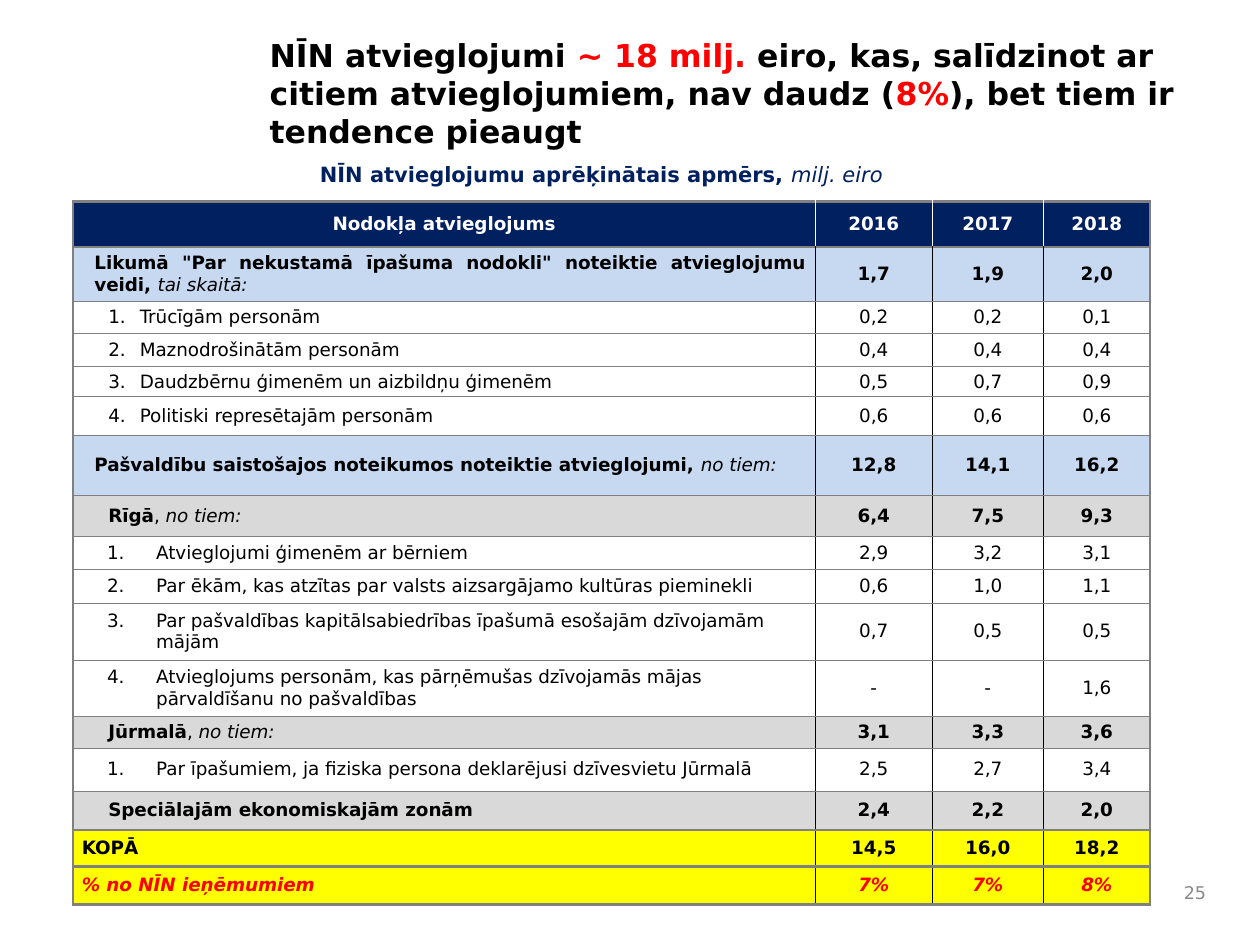
from lxml import etree
from pptx import Presentation
from pptx.dml.color import RGBColor
from pptx.enum.text import MSO_ANCHOR, MSO_AUTO_SIZE, PP_ALIGN
from pptx.oxml.ns import qn
from pptx.util import Inches, Pt

FONT = "DejaVu Sans"
LEFT, CENTER, RIGHT, JUSTIFY = (
    PP_ALIGN.LEFT, PP_ALIGN.CENTER, PP_ALIGN.RIGHT, PP_ALIGN.JUSTIFY)
TOP, MIDDLE = MSO_ANCHOR.TOP, MSO_ANCHOR.MIDDLE
NO_FIT = MSO_AUTO_SIZE.NONE

COLORS = {
    "black": "000000", "white": "FFFFFF", "red": "FF0000", "navy": "002060",
    "blue": "C6D9F1", "grey": "D9D9D9", "yellow": "FFFF00",
    "rule": "808080", "number": "898989",
}

# Run formats
BOLD = {"bold": True, "italic": False}
ITALIC = {"bold": False, "italic": True}
PLAIN = {"bold": False, "italic": False}
BOLD_ITALIC = {"bold": True, "italic": True}

# Row kinds: fill, text colour, value format, label alignment, margin, indent
KINDS = {
    "head": ("navy", "white", BOLD, CENTER, 0, 0),
    "group": ("blue", "black", BOLD, JUSTIFY, 0.1, 0),
    "place": ("grey", "black", BOLD, LEFT, 0.21, 0),
    "law": ("white", "black", PLAIN, LEFT, 0.46, -0.25),
    "local": ("white", "black", PLAIN, LEFT, 0.59, -0.39),
    "total": ("yellow", "black", BOLD, LEFT, 0, 0),
    "share": ("yellow", "red", BOLD_ITALIC, LEFT, 0, 0),
}
NUMBERED = ("law", "local")
FRAMED = ("head", "total", "share")  # rows with thick lines above and below

COLUMNS = [5.89, 0.93, 0.88, 0.85]
# Kind, height, label (italic note after "|"), values
ROWS = [
    ("head", 0.36, "Nodokļa atvieglojums", "2016 2017 2018"),
    ("group", 0.43, 'Likumā "Par nekustamā īpašuma nodokli" noteiktie '
     "atvieglojumu veidi, |tai skaitā:", "1,7 1,9 2,0"),
    ("law", 0.26, "Trūcīgām personām", "0,2 0,2 0,1"),
    ("law", 0.26, "Maznodrošinātām personām", "0,4 0,4 0,4"),
    ("law", 0.24, "Daudzbērnu ģimenēm un aizbildņu ģimenēm", "0,5 0,7 0,9"),
    ("law", 0.31, "Politiski represētajām personām", "0,6 0,6 0,6"),
    ("group", 0.47, "Pašvaldību saistošajos noteikumos noteiktie "
     "atvieglojumi, |no tiem:", "12,8 14,1 16,2"),
    ("place", 0.33, "Rīgā|, |no tiem:", "6,4 7,5 9,3"),
    ("local", 0.26, "Atvieglojumi ģimenēm ar bērniem", "2,9 3,2 3,1"),
    ("local", 0.27, "Par ēkām, kas atzītas par valsts aizsargājamo kultūras "
     "pieminekli", "0,6 1,0 1,1"),
    ("local", 0.45, "Par pašvaldības kapitālsabiedrības īpašumā esošajām "
     "dzīvojamām mājām", "0,7 0,5 0,5"),
    ("local", 0.45, "Atvieglojums personām, kas pārņēmušas dzīvojamās mājas "
     "pārvaldīšanu no pašvaldības", "- - 1,6"),
    ("place", 0.25, "Jūrmalā|, |no tiem:", "3,1 3,3 3,6"),
    ("local", 0.34, "Par īpašumiem, ja fiziska persona deklarējusi "
     "dzīvesvietu Jūrmalā", "2,5 2,7 3,4"),
    ("place", 0.31, "Speciālajām ekonomiskajām zonām", "2,4 2,2 2,0"),
    ("total", 0.29, "KOPĀ", "14,5 16,0 18,2"),
    ("share", 0.3, "% no NĪN ieņēmumiem", "7% 7% 8%"),
]


def rgb(name):
    return RGBColor.from_string(COLORS[name])


def write(p, runs, size, align):
    """Fill a paragraph with (text, colour, format) runs."""
    p.alignment = align
    for text, color, fmt in runs:
        r = p.add_run()
        r.text = text
        for key, value in {"name": FONT, "size": Pt(size), **fmt}.items():
            setattr(r.font, key, value)
        r.font.color.rgb = rgb(color)


def set_frame(tf, anchor):
    for key, value in {"word_wrap": True, "auto_size": NO_FIT,
                       "vertical_anchor": anchor}.items():
        setattr(tf, key, value)


def add_title(slide, box):
    sp = slide.shapes.title
    sp.left, sp.top, sp.width, sp.height = map(Inches, box)
    set_frame(sp.text_frame, MIDDLE)
    parts = [("NĪN atvieglojumi ", "black"), ("~ 18 milj.", "red"),
             ("\u00a0eiro, kas, salīdzinot ar citiem atvieglojumiem, "
              "nav daudz (", "black"),
             ("8%", "red"), ("), bet tiem ir tendence pieaugt", "black")]
    write(sp.text_frame.paragraphs[0],
          [(text, color, BOLD) for text, color in parts], 18, LEFT)


def add_text(slide, box, runs, size, align, anchor):
    tf = slide.shapes.add_textbox(*map(Inches, box)).text_frame
    set_frame(tf, anchor)
    write(tf.paragraphs[0], runs, size, align)


def set_borders(cell, borders):
    """Draw the sides of a cell from {side: (colour, width)}."""
    tcPr = cell._tc.get_or_add_tcPr()
    for side in "LRTB":
        color, width = borders[side]
        ln = etree.SubElement(tcPr, qn(f"a:ln{side}"), w=str(Pt(width)))
        fill = etree.SubElement(ln, qn("a:solidFill"))
        etree.SubElement(fill, qn("a:srgbClr"), val=COLORS[color])


def cell_borders(i, j):
    kind = ROWS[i][0]
    outer = ("rule", 1.5)
    inner = ("white" if kind == "head" else "black", 0.5)

    def across(a, b):
        edge = a < 0 or b == len(ROWS)
        thick = edge or ROWS[a][0] in FRAMED or ROWS[b][0] in FRAMED
        return outer if thick else ("rule", 0.5)

    return {"L": inner if j else outer,
            "R": inner if j < len(COLUMNS) - 1 else outer,
            "T": across(i - 1, i), "B": across(i, i + 1)}


def indent_label(p, margin, indent, number):
    pPr = p._p.get_or_add_pPr()
    pPr.set("marL", str(Inches(margin)))
    pPr.set("indent", str(Inches(indent)))
    if number:
        etree.SubElement(pPr, qn("a:buFont"), typeface=FONT)
        etree.SubElement(pPr, qn("a:buAutoNum"), type="arabicPeriod",
                         startAt=str(number))


def label_runs(label, color, fmt):
    """Lead text, then an optional plain joint and an italic note."""
    lead, *rest = label.split("|")
    formats = [PLAIN, ITALIC][-len(rest):]
    return [(lead, color, fmt)] + [
        (text, color, f) for text, f in zip(rest, formats)]


def add_relief_table(slide, box):
    table = slide.shapes.add_table(
        len(ROWS), len(COLUMNS), *map(Inches, box)).table
    for column, width in zip(table.columns, COLUMNS):
        column.width = Inches(width)
    number = 0
    for i, (kind, height, label, values) in enumerate(ROWS):
        table.rows[i].height = Inches(height)
        fill, color, fmt, align, margin, indent = KINDS[kind]
        number = number + 1 if kind in NUMBERED else 0
        for j, text in enumerate([label, *values.split()]):
            cell = table.cell(i, j)
            for key, value in {"vertical_anchor": MIDDLE,
                               "margin_left": Inches(0.07),
                               "margin_right": Inches(0.07),
                               "margin_top": 0, "margin_bottom": 0}.items():
                setattr(cell, key, value)
            set_borders(cell, cell_borders(i, j))
            cell.fill.solid()
            cell.fill.fore_color.rgb = rgb(fill)
            p = cell.text_frame.paragraphs[0]
            if j == 0:
                indent_label(p, margin, indent, number)
            write(p, label_runs(text, color, fmt), 10.5,
                  CENTER if j else align)


def main():
    prs = Presentation()
    prs.slide_width, prs.slide_height = Inches(10), Inches(7.5)
    slide = prs.slides.add_slide(prs.slide_layouts[5])
    add_title(slide, (2.04, 0.22, 7.7, 1.03))
    # Page number
    add_text(slide, (9.21, 6.92, 0.46, 0.33), [("25", "number", PLAIN)],
             10, RIGHT, MIDDLE)
    # Table heading
    add_text(slide, (2.44, 1.23, 5.52, 0.3),
             [("NĪN atvieglojumu aprēķinātais apmērs, ", "navy", BOLD),
              ("milj. eiro", "navy", ITALIC)], 12, LEFT, TOP)
    add_relief_table(slide, (0.58, 1.6, 8.55, 5.58))
    prs.save("out.pptx")


if __name__ == "__main__":
    main()
